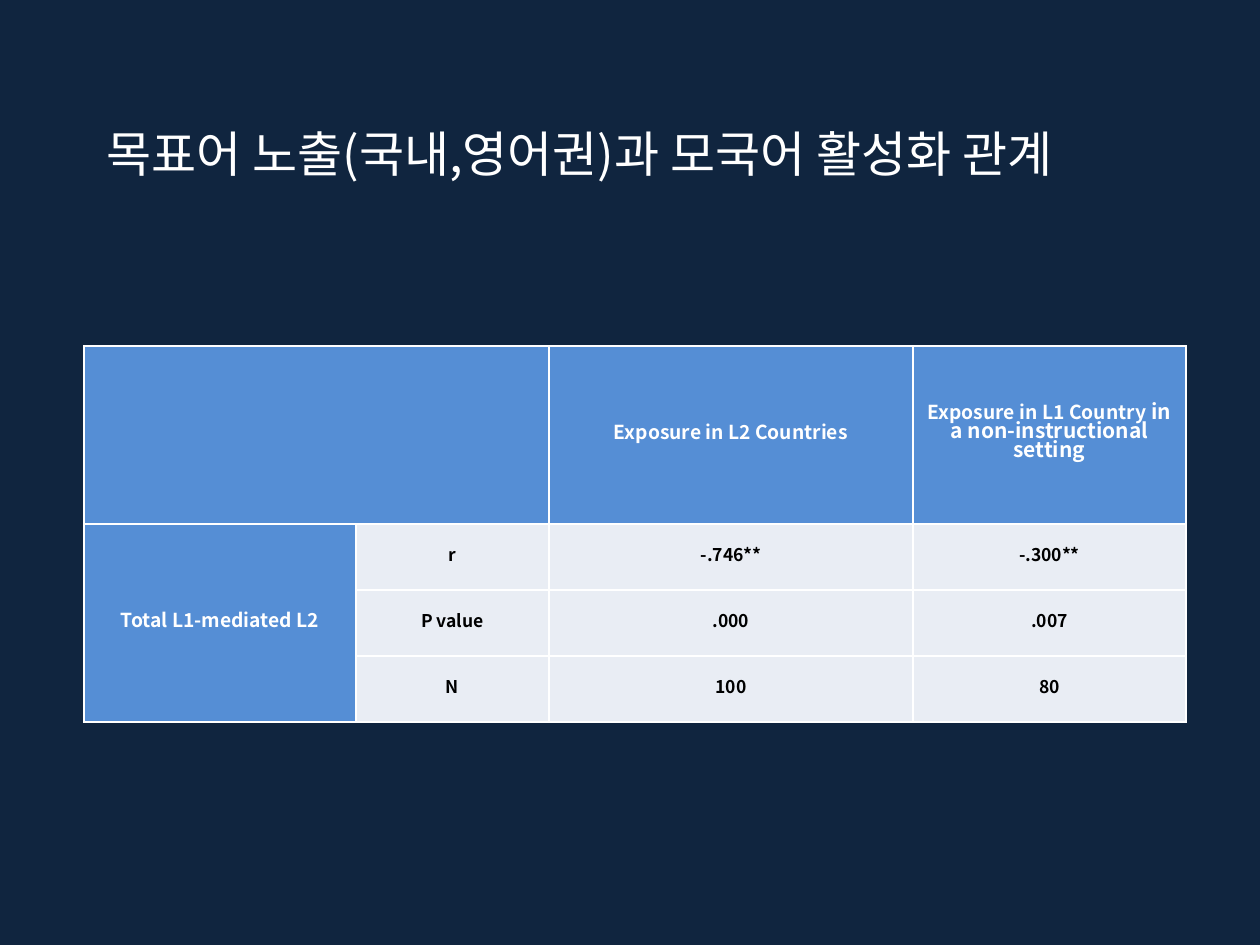
from lxml import etree
from pptx import Presentation
from pptx import util as u
from pptx.dml import color
from pptx.enum import text
from pptx.oxml import ns

EMU_PER_PX = 914400 / 126
FONT = "Noto Sans CJK KR"
COLORS = {
    "background": "10253F",
    "header": "558ED5",
    "body": "E9EDF4",
    "light": "FFFFFF",
    "dark": "000000",
}
COLUMN_WIDTHS = [272, 193, 364, 273]
ROW_HEIGHTS = [178, 66, 66, 66]
CELLS = [
    [[], [], [("Exposure in L2 Countries", 11)],
     [("Exposure in L1 Country", 11), (" in a non-instructional setting", 12)]],
    [[("Total L1-mediated L2", 11)], [("r", 10)], [("-.746**", 10)], [("-.300**", 10)]],
    [[], [("P value", 10)], [(".000", 10)], [(".007", 10)]],
    [[], [("N", 10)], [("100", 10)], [("80", 10)]],
]


def px(length):
    return u.Emu(round(length * EMU_PER_PX))


def rgb(name):
    return color.RGBColor.from_string(COLORS[name])


def add_run(paragraph, wording, size, color_name, bold=False):
    run = paragraph.add_run()
    run.text = wording
    run.font.name = FONT
    run.font.size = u.Pt(size)
    run.font.bold = bold
    run.font.color.rgb = rgb(color_name)
    east_asian = etree.SubElement(run.font._element, ns.qn("a:ea"))
    east_asian.set("typeface", FONT)


def add_borders(cell):
    properties = cell._tc.get_or_add_tcPr()
    for side in ("lnL", "lnR", "lnT", "lnB"):
        line = etree.SubElement(properties, ns.qn(f"a:{side}"), w=str(u.Pt(1)))
        fill = etree.SubElement(line, ns.qn("a:solidFill"))
        etree.SubElement(fill, ns.qn("a:srgbClr"), val=COLORS["light"])


def format_cell(cell, runs, is_header):
    add_borders(cell)
    cell.fill.solid()
    cell.fill.fore_color.rgb = rgb("header" if is_header else "body")
    cell.vertical_anchor = text.MSO_ANCHOR.MIDDLE
    cell.margin_left = cell.margin_right = px(8)
    cell.margin_top = cell.margin_bottom = 0
    paragraph = cell.text_frame.paragraphs[0]
    paragraph.alignment = text.PP_ALIGN.CENTER
    paragraph.line_spacing = u.Pt(11)
    paragraph.space_after = u.Pt(10)
    for wording, size in runs:
        add_run(paragraph, wording, size, "light" if is_header else "dark", True)


def place_title(slide, left, top, width, height):
    title = slide.shapes.title
    title.left, title.top = px(left), px(top)
    title.width, title.height = px(width), px(height)
    frame = title.text_frame
    frame.word_wrap = False
    frame.auto_size = text.MSO_AUTO_SIZE.SHAPE_TO_FIT_TEXT
    paragraph = frame.paragraphs[0]
    paragraph.alignment = text.PP_ALIGN.LEFT
    add_run(paragraph, "목표어 노출(국내,영어권)과 모국어 활성화 관계", 28, "light")


def add_correlation_table(slide, left, top):
    frame = slide.shapes.add_table(
        len(ROW_HEIGHTS), len(COLUMN_WIDTHS), px(left), px(top),
        px(sum(COLUMN_WIDTHS)), px(sum(ROW_HEIGHTS)))
    table = frame.table
    for column, width in zip(table.columns, COLUMN_WIDTHS):
        column.width = px(width)
    for row, height in zip(table.rows, ROW_HEIGHTS):
        row.height = px(height)
    for row_index, row in enumerate(CELLS):
        for column_index, runs in enumerate(row):
            is_header = row_index == 0 or column_index == 0
            format_cell(table.cell(row_index, column_index), runs, is_header)
    table.cell(0, 0).merge(table.cell(0, 1))
    table.cell(1, 0).merge(table.cell(3, 0))


def main():
    presentation = Presentation()
    presentation.slide_width, presentation.slide_height = px(1260), px(945)
    slide = presentation.slides.add_slide(presentation.slide_layouts[5])
    slide.background.fill.solid()
    slide.background.fill.fore_color.rgb = rgb("background")
    place_title(slide, 94, 117, 1085, 72)
    add_correlation_table(slide, 84, 346)
    presentation.save("out.pptx")


if __name__ == "__main__":
    main()
